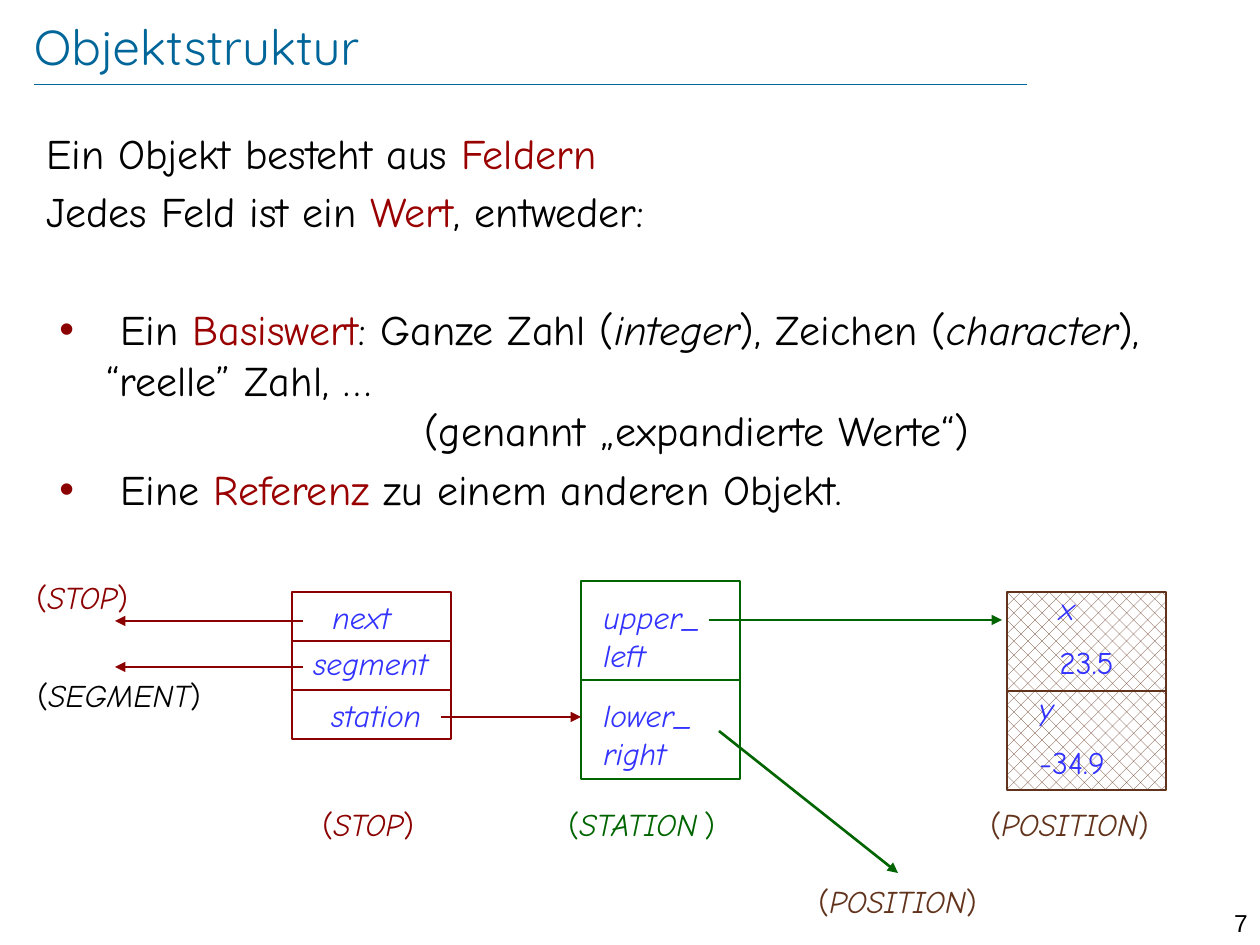
"""Build the slide "Objektstruktur" with its object diagram."""
from dataclasses import dataclass
from typing import Optional

from lxml.etree import SubElement
from pptx import Presentation
from pptx.dml.color import RGBColor
from pptx.enum.dml import MSO_PATTERN
from pptx.enum.shapes import MSO_CONNECTOR, MSO_SHAPE
from pptx.enum.text import MSO_ANCHOR, PP_ALIGN
from pptx.oxml.ns import qn
from pptx.util import Emu, Pt

PX_PER_INCH = 126
BLACK, TITLE, ACCENT = "000000", "006699", "990000"
RED, GREEN, BROWN, BLUE = "8B0000", "006400", "62331C", "3333FF"


@dataclass(frozen=True)
class Span:
    text: str
    color: str = BLACK
    italic: bool = False
    size: int = 18
    font: str = "Comic Neue"


@dataclass(frozen=True)
class Line:
    spans: list[Span]
    before: float = 0
    bullet: bool = False
    tab: Optional[int] = None


@dataclass(frozen=True)
class Label:
    left: int
    top: int
    width: int
    height: int
    lines: list[Line]


@dataclass(frozen=True)
class Record:
    left: int
    top: int
    row_height: int
    rows: int
    color: str
    hatched: bool = False


@dataclass(frozen=True)
class Arrow:
    start: tuple[int, int]
    end: tuple[int, int]
    color: str


def px(value: int) -> Emu:
    """Turn slide pixels into EMU."""
    return Emu(round(value * 914400 / PX_PER_INCH))


def rgb(color: str) -> RGBColor:
    """Turn a hex string into a colour."""
    return RGBColor.from_string(color)


def format_run(run, span: Span) -> None:
    """Apply the font settings of a span."""
    run.font.name = span.font
    run.font.size = Pt(span.size)
    run.font.italic = span.italic
    run.font.color.rgb = rgb(span.color)


def add_bullet(para) -> None:
    """Give a paragraph a red hanging bullet."""
    properties = para._p.get_or_add_pPr()
    properties.set("marL", str(px(60)))
    properties.set("indent", str(-px(47)))
    color = SubElement(properties, qn("a:buClr"))
    SubElement(color, qn("a:srgbClr"), val=RED)
    SubElement(properties, qn("a:buFont"), typeface="Arial")
    SubElement(properties, qn("a:buChar"), char="•")


def fill_paragraph(para, line: Line) -> None:
    """Write one line of spans into a paragraph."""
    if line.bullet:
        add_bullet(para)
    if line.tab:
        stops = SubElement(para._p.get_or_add_pPr(), qn("a:tabLst"))
        SubElement(stops, qn("a:tab"), pos=str(px(line.tab)), algn="l")
    if line.before:
        para.space_before = Pt(line.before)
    for span in line.spans:
        for index, piece in enumerate(span.text.split("\n")):
            if index:
                para.add_line_break()
            run = para.add_run()
            run.text = piece
            format_run(run, span)


def add_label(slide, label: Label):
    """Add a wrapping text box and return its text frame."""
    box = slide.shapes.add_textbox(
        px(label.left), px(label.top), px(label.width), px(label.height))
    frame = box.text_frame
    frame.word_wrap = True
    for index, line in enumerate(label.lines):
        para = frame.add_paragraph() if index else frame.paragraphs[0]
        fill_paragraph(para, line)
    return frame


def add_record(slide, record: Record) -> None:
    """Draw an object as a stack of equal field boxes."""
    for row in range(record.rows):
        field = slide.shapes.add_shape(
            MSO_SHAPE.RECTANGLE, px(record.left),
            px(record.top + row * record.row_height), px(159), px(record.row_height))
        field.shadow.inherit = False
        field.line.color.rgb = rgb(record.color)
        field.line.width = Pt(1.5)
        if record.hatched:
            field.fill.patterned()
            field.fill.pattern = MSO_PATTERN.PERCENT_25
            field.fill.fore_color.rgb = rgb(record.color)
            field.fill.back_color.rgb = rgb("FFFFFF")
        else:
            field.fill.background()


def add_line(slide, arrow: Arrow, width: float = 1.5, head: bool = True) -> None:
    """Draw a straight line, with an arrowhead at its end if wanted."""
    connector = slide.shapes.add_connector(
        MSO_CONNECTOR.STRAIGHT, *map(px, arrow.start + arrow.end))
    connector.line.color.rgb = rgb(arrow.color)
    connector.line.width = Pt(width)
    if head:
        SubElement(connector.line._get_or_add_ln(), qn("a:tailEnd"), type="triangle")
    SubElement(connector._element.spPr, qn("a:effectLst"))


def add_title(slide, span: Span) -> None:
    """Place and format the title placeholder."""
    title = slide.shapes.title
    title.left, title.top, title.width, title.height = map(px, (34, 16, 1095, 60))
    frame = title.text_frame
    frame.margin_left = frame.margin_right = frame.margin_top = frame.margin_bottom = 0
    frame.vertical_anchor = MSO_ANCHOR.MIDDLE
    frame.text = span.text
    frame.paragraphs[0].alignment = PP_ALIGN.LEFT
    format_run(frame.paragraphs[0].runs[0], span)


def body(text: str, color: str = BLACK, italic: bool = False) -> Span:
    """Make a span in body size."""
    return Span(text, color, italic, 24)


def type_label(left: int, top: int, name: str, color: str, *extra: Span) -> Label:
    """Make a type name in parentheses."""
    spans = [Span("(", color), Span(name, color, True), *extra, Span(")", color)]
    return Label(left, top, 278, 50, [Line(spans)])


def field_label(left: int, top: int, name: str, value: str = "") -> Label:
    """Make a field name with an optional value below it."""
    lines = [Line([Span(name, BLUE, True)])]
    if value:
        lines.append(Line([Span(value, BLUE)], before=9))
    return Label(left, top, 159, 108 if value else 50, lines)


BODY = Label(34, 121, 1184, 777, [
    Line([body("Ein Objekt besteht aus "), body("Feldern", ACCENT)]),
    Line([body("Jedes Feld ist ein "), body("Wert", ACCENT), body(", entweder:")], 4.8),
    Line([body(" Ein "), body("Basiswert", ACCENT), body(": Ganze Zahl ("),
          body("integer", italic=True), body("), Zeichen ("),
          body("character", italic=True),
          body("), “reelle” Zahl, …\n\t(genannt „expandierte Werte“)")],
         38.5, True, 378),
    Line([body(" Eine "), body("Referenz", ACCENT),
          body(" zu einem anderen Objekt.")], 4.8, True),
])
RECORDS = [Record(292, 592, 49, 3, RED), Record(581, 581, 99, 2, GREEN),
           Record(1007, 592, 99, 2, BROWN, True)]
ARROWS = [Arrow((441, 717), (581, 717), RED), Arrow((303, 667), (115, 667), RED),
          Arrow((303, 621), (115, 621), RED), Arrow((719, 731), (898, 873), GREEN),
          Arrow((709, 620), (1002, 620), GREEN)]
LABELS = [
    type_label(310, 799, "STOP", RED), type_label(24, 572, "STOP", RED),
    type_label(25, 670, "SEGMENT", BLACK),
    type_label(556, 799, "STATION", GREEN, Span(" ", GREEN, True, 12)),
    type_label(978, 799, "POSITION", BROWN), type_label(806, 876, "POSITION", BROWN),
    field_label(320, 592, "next"), field_label(301, 638, "segment"),
    field_label(319, 690, "station"), field_label(591, 592, "upper_\nleft"),
    field_label(591, 690, "lower_\nright"), field_label(1047, 583, "x", "23.5"),
    field_label(1027, 683, "y", "-34.9"),
]
PAGE_NUMBER = Label(1191, 902, 69, 30, [Line([Span("7", size=14, font="Arial")])])


def main() -> None:
    """Build and save the deck."""
    deck = Presentation()
    deck.slide_width, deck.slide_height = px(1260), px(945)
    slide = deck.slides.add_slide(deck.slide_layouts[5])
    add_line(slide, Arrow((34, 84), (1027, 84), TITLE), 0.25, False)
    add_title(slide, Span("Objektstruktur", TITLE, size=28, font="Quicksand"))
    for record in RECORDS:
        add_record(slide, record)
    for arrow in ARROWS:
        add_line(slide, arrow)
    for label in [BODY, *LABELS]:
        add_label(slide, label)
    number = add_label(slide, PAGE_NUMBER)
    number.paragraphs[0].alignment = PP_ALIGN.RIGHT
    deck.save("out.pptx")


if __name__ == "__main__":
    main()
